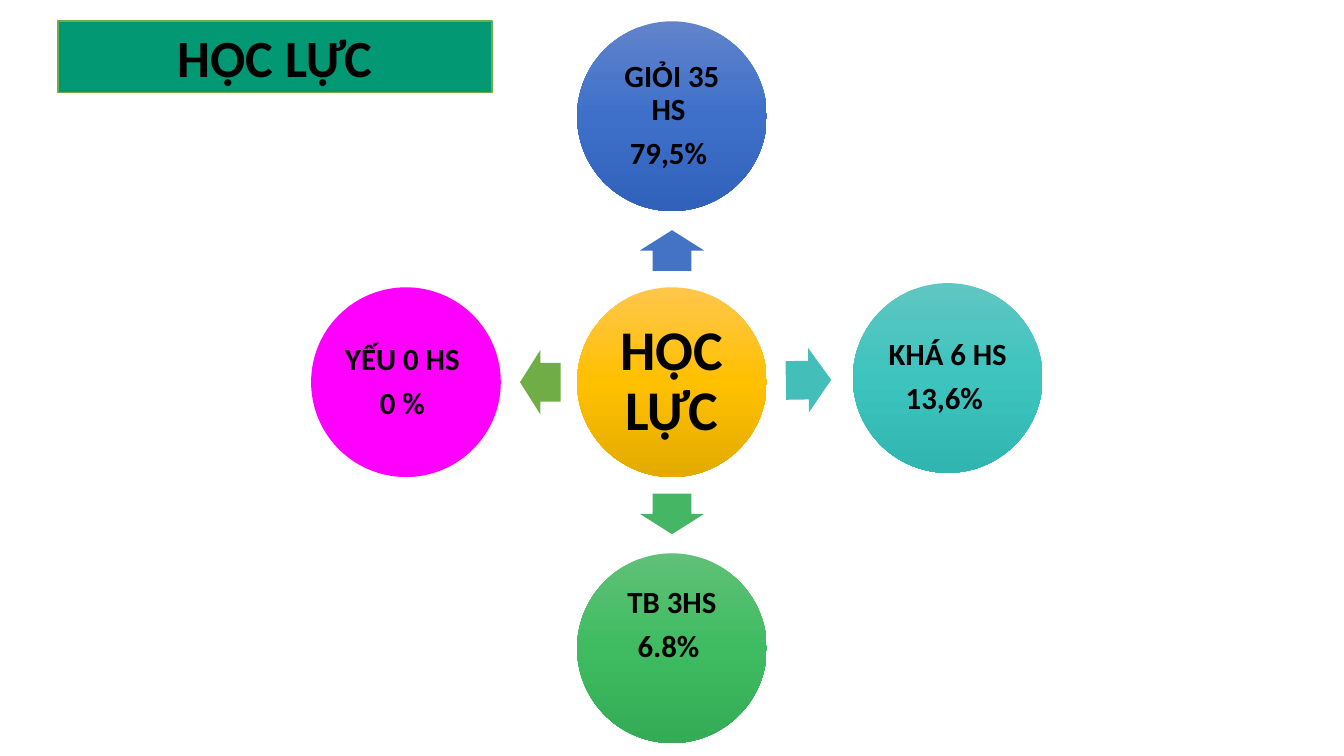
from copy import deepcopy
from math import atan2, degrees

from pptx import Presentation
from pptx.dml.color import RGBColor
from pptx.enum.shapes import MSO_SHAPE as Shape
from pptx.enum.text import MSO_ANCHOR as Anchor, PP_ALIGN as Align
from pptx.oxml.ns import qn
from pptx.util import Pt

FONT = "Calibri"
HUB_X, HUB_Y = 480, 273
DIAMETER = 135.5
ARROW_WIDTH = 46
ARROW_PLACE = 0.495  # share of the way from hub to grade

# offset from hub, arrow length, arrow colour, circle colours, lines, bottom inset
GRADES = [
    ((0, -190), 29, "4472C4", ["6183CB", "3E70CA", "3062BB"],
     ["GIỎI 35 HS ", "79,5% "], 2),
    ((197, -3), 32.4, "43BEB9", ["60C6C1", "3DC4BF", "30B5B0"],
     ["KHÁ 6 HS", "13,6% "], 2),
    ((0, 190), 29, "45B664", ["60C077", "3FBC62", "33AC55"],
     ["TB 3HS", "6.8% "], 34),
    ((-190, 0), 29, "70AD47", ["FF00FF"],
     ["YẾU 0 HS ", "0 % "], 2),
]


def color(value):
    return RGBColor.from_string(value)


def paint(shape, colors):
    """Solid fill for one colour, top-to-bottom gradient for three."""
    if len(colors) == 1:
        shape.fill.solid()
        shape.fill.fore_color.rgb = color(colors[0])
        return
    shape.fill.gradient()
    shape.fill.gradient_angle = 270
    stop_list = next(shape._element.spPr.iter(qn("a:gsLst")))
    stop_list.append(deepcopy(stop_list[-1]))
    for stop, value, position in zip(shape.fill.gradient_stops, colors, (0, 0.5, 1)):
        stop.color.rgb = color(value)
        stop.position = position


def add_block(slide, kind, center, size, colors):
    (x, y), (width, height) = center, size
    block = slide.shapes.add_shape(
        kind, Pt(x - width / 2), Pt(y - height / 2), Pt(width), Pt(height))
    block.shadow.inherit = False
    block.line.fill.background()
    paint(block, colors)
    return block


def write(shape, lines, size):
    frame = shape.text_frame
    frame.word_wrap = True
    frame.vertical_anchor = Anchor.MIDDLE
    frame.text = "\n".join(lines)
    for paragraph in frame.paragraphs:
        paragraph.alignment = Align.CENTER
        for run in paragraph.runs:
            run.font.name = FONT
            run.font.size = Pt(size)
            run.font.bold = True
            run.font.color.rgb = color("000000")


def add_circle(slide, center, colors, lines, size, inset, bottom):
    circle = add_block(slide, Shape.OVAL, center, (DIAMETER, DIAMETER), colors)
    write(circle, lines, size)
    frame = circle.text_frame
    frame.margin_left = frame.margin_right = frame.margin_top = Pt(inset)
    frame.margin_bottom = Pt(bottom)
    for paragraph in frame.paragraphs:
        paragraph.line_spacing = 0.9
        paragraph.space_after = Pt(size * 0.35)


def add_arrow(slide, offset, length, fill):
    dx, dy = offset
    center = HUB_X + dx * ARROW_PLACE, HUB_Y + dy * ARROW_PLACE
    arrow = add_block(slide, Shape.RIGHT_ARROW, center, (length, ARROW_WIDTH), [fill])
    arrow.adjustments[0] = 0.6
    arrow.adjustments[1] = 0.5
    arrow.rotation = degrees(atan2(dy, dx)) % 360


def add_title(slide):
    title = add_block(slide, Shape.RECTANGLE, (196.5, 40.5), (310, 51), ["029874"])
    title.line.color.rgb = color("70AD47")
    title.line.width = Pt(1)
    write(title, ["HỌC LỰC"], 37.3)


def main():
    deck = Presentation()
    deck.slide_width, deck.slide_height = Pt(960), Pt(540)
    slide = deck.slides.add_slide(deck.slide_layouts[6])

    # Hub in the middle
    add_circle(slide, (HUB_X, HUB_Y), ["FFC64B", "FFC000", "E3AB00"],
               ["HỌC LỰC"], 40, 4, 4)

    # Grades around the hub, each with its arrow
    for (dx, dy), length, arrow_fill, colors, lines, bottom in GRADES:
        add_arrow(slide, (dx, dy), length, arrow_fill)
        add_circle(slide, (HUB_X + dx, HUB_Y + dy), colors, lines, 22, 2, bottom)

    # Title banner
    add_title(slide)
    deck.save("out.pptx")


if __name__ == "__main__":
    main()
